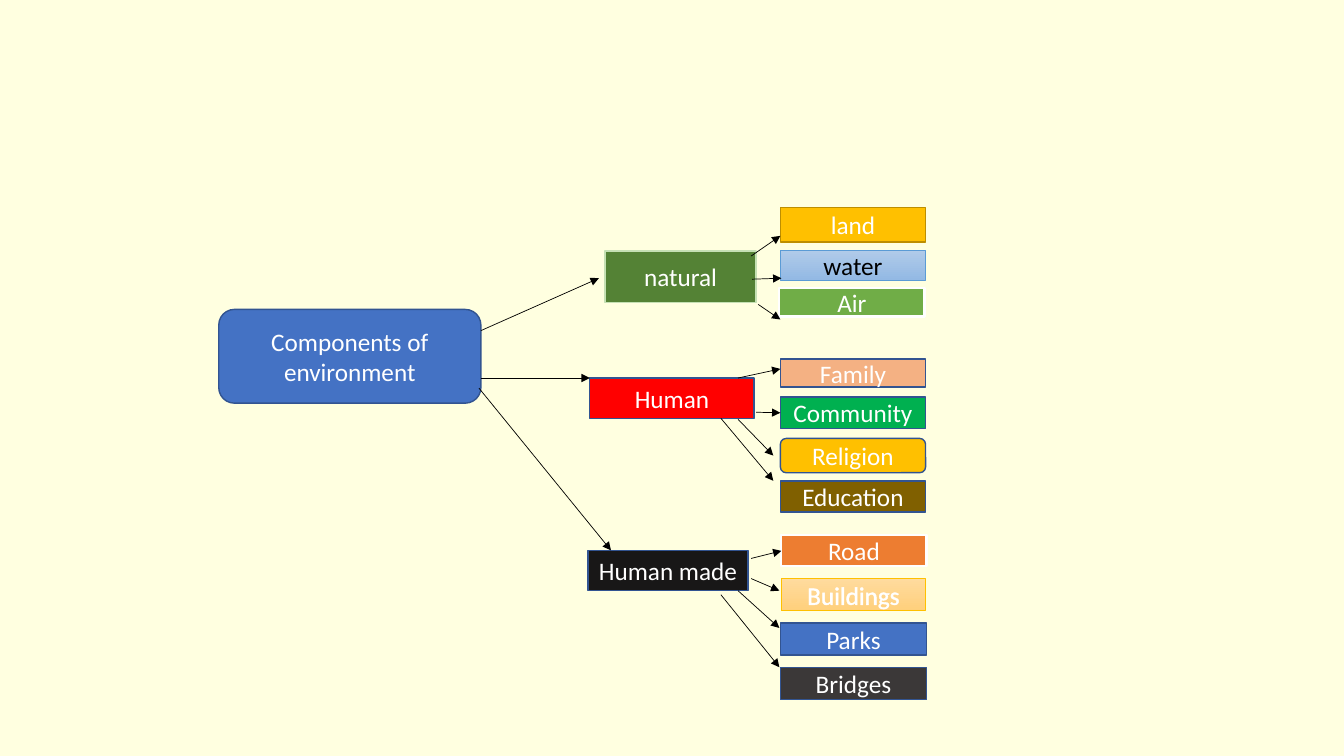
"""Build a slide with a tree of the components of the environment."""
from lxml import etree
from pptx import Presentation
from pptx.dml.color import RGBColor
from pptx.enum.shapes import MSO_CONNECTOR, MSO_SHAPE
from pptx.enum.text import MSO_ANCHOR, PP_ALIGN
from pptx.oxml.ns import qn
from pptx.util import Inches, Pt

RECTANGLE = MSO_SHAPE.RECTANGLE
ROUNDED = MSO_SHAPE.ROUNDED_RECTANGLE
STRAIGHT = MSO_CONNECTOR.STRAIGHT
CENTER = PP_ALIGN.CENTER
MIDDLE = MSO_ANCHOR.MIDDLE

FONT = "Calibri"
BACKGROUND = "FFFFE0"
WHITE, BLACK, NAVY = "FFFFFF", "000000", "325491"
LEFT_SIDE = 1
ROUNDED_BOXES = ("Components of environment", "Religion")
DARK_TEXT_BOXES = ("water",)
OUTLINED_TEXT_BOXES = ("Buildings",)

# text, (left, top, width, height), fill or gradient ends, line colour, line width
BOXES = [
    ("Components of environment", (2.17, 3.07, 2.6, 0.93), "4472C4", NAVY, 1),
    ("natural", (6, 2.49, 1.5, 0.51), "548235", "C5E0B4", 1),
    ("land", (7.74, 2.06, 1.44, 0.34), "FFC000", "BD8E00", 1),
    ("water", (7.74, 2.48, 1.44, 0.3), ("B1CBE9", "93B9E4"), "5B9BD5", 0.5),
    ("Air", (7.73, 2.86, 1.44, 0.28), "70AD47", WHITE, 1.5),
    ("Human", (5.85, 3.75, 1.63, 0.4), "FF0000", NAVY, 1),
    ("Family", (7.74, 3.56, 1.44, 0.28), "F4B183", NAVY, 1),
    ("Community", (7.74, 3.94, 1.44, 0.31), "00B050", NAVY, 1),
    ("Religion", (7.74, 4.35, 1.44, 0.34), "FFC000", NAVY, 1),
    ("Education", (7.74, 4.77, 1.44, 0.31), "806000", NAVY, 1),
    ("Human made", (5.83, 5.46, 1.59, 0.4), "181717", NAVY, 1),
    ("Road", (7.75, 5.31, 1.44, 0.31), "ED7D31", WHITE, 1.5),
    ("Buildings", (7.75, 5.74, 1.43, 0.32), ("FFDB9E", "FFD07C"), "FFC000", 0.5),
    ("Parks", (7.74, 6.18, 1.45, 0.32), "4472C4", NAVY, 1),
    ("Bridges", (7.74, 6.62, 1.45, 0.32), "3B3838", NAVY, 1),
]

ARROWS = [
    ((4.77, 3.28), (5.94, 2.76)),
    ((4.77, 3.75), (5.85, 3.75)),
    ((4.75, 3.85), (6.06, 5.46)),
    ((7.45, 2.54), (7.74, 2.34)),
    ((7.46, 2.77), (7.75, 2.76)),
    ((7.52, 3.02), (7.74, 3.17)),
    ((7.32, 3.75), (7.74, 3.66)),
    ((7.5, 4.09), "Community"),
    ((7.32, 4.16), (7.67, 4.52)),
    ((7.15, 4.15), (7.67, 4.77)),
    ((7.45, 5.54), "Road"),
    ((7.45, 5.74), (7.73, 5.86)),
    ((7.32, 5.86), (7.73, 6.23)),
    ((7.15, 5.9), (7.73, 6.62)),
]


def paint(color_format, color):
    color_format.rgb = RGBColor.from_string(color)


def fill_shape(shape, fill):
    if isinstance(fill, str):
        shape.fill.solid()
        paint(shape.fill.fore_color, fill)
        return
    shape.fill.gradient()
    shape.fill.gradient_angle = 270
    for stop, color in zip(shape.fill.gradient_stops, fill):
        paint(stop.color, color)


def outline_text(run, color, width):
    line = etree.Element(qn("a:ln"), w=str(Pt(width)))
    solid = etree.SubElement(line, qn("a:solidFill"))
    etree.SubElement(solid, qn("a:srgbClr"), val=color)
    run._r.get_or_add_rPr().insert(0, line)


def add_box(slide, text, place, fill, line_color, line_width):
    kind = ROUNDED if text in ROUNDED_BOXES else RECTANGLE
    shape = slide.shapes.add_shape(kind, *map(Inches, place))
    shape.shadow.inherit = False
    fill_shape(shape, fill)
    paint(shape.line.color, line_color)
    shape.line.width = Pt(line_width)
    frame = shape.text_frame
    frame.word_wrap = True
    frame.vertical_anchor = MIDDLE
    paragraph = frame.paragraphs[0]
    paragraph.text = text
    paragraph.alignment = CENTER
    paragraph.font.name = FONT
    paragraph.font.size = Pt(18)
    text_color = BLACK if text in DARK_TEXT_BOXES else WHITE
    paint(paragraph.font.color, text_color)
    if text in OUTLINED_TEXT_BOXES:
        outline_text(paragraph.runs[0], text_color, 0.75)
    return shape


def add_arrow(slide, start, end, boxes):
    target = start if isinstance(end, str) else end
    connector = slide.shapes.add_connector(STRAIGHT, *map(Inches, start + target))
    if isinstance(end, str):
        connector.end_connect(boxes[end], LEFT_SIDE)
    paint(connector.line.color, BLACK)
    connector.line.width = Pt(0.5)
    line = connector.line._get_or_add_ln()
    etree.SubElement(line, qn("a:tailEnd"), type="triangle")
    etree.SubElement(connector._element.spPr, qn("a:effectLst"))


def main():
    presentation = Presentation()
    presentation.slide_width = Inches(13.33)
    presentation.slide_height = Inches(7.5)
    slide = presentation.slides.add_slide(presentation.slide_layouts[6])
    slide.background.fill.solid()
    paint(slide.background.fill.fore_color, BACKGROUND)
    boxes = {box[0]: add_box(slide, *box) for box in BOXES}
    for start, end in ARROWS:
        add_arrow(slide, start, end, boxes)
    presentation.save("out.pptx")


if __name__ == "__main__":
    main()
